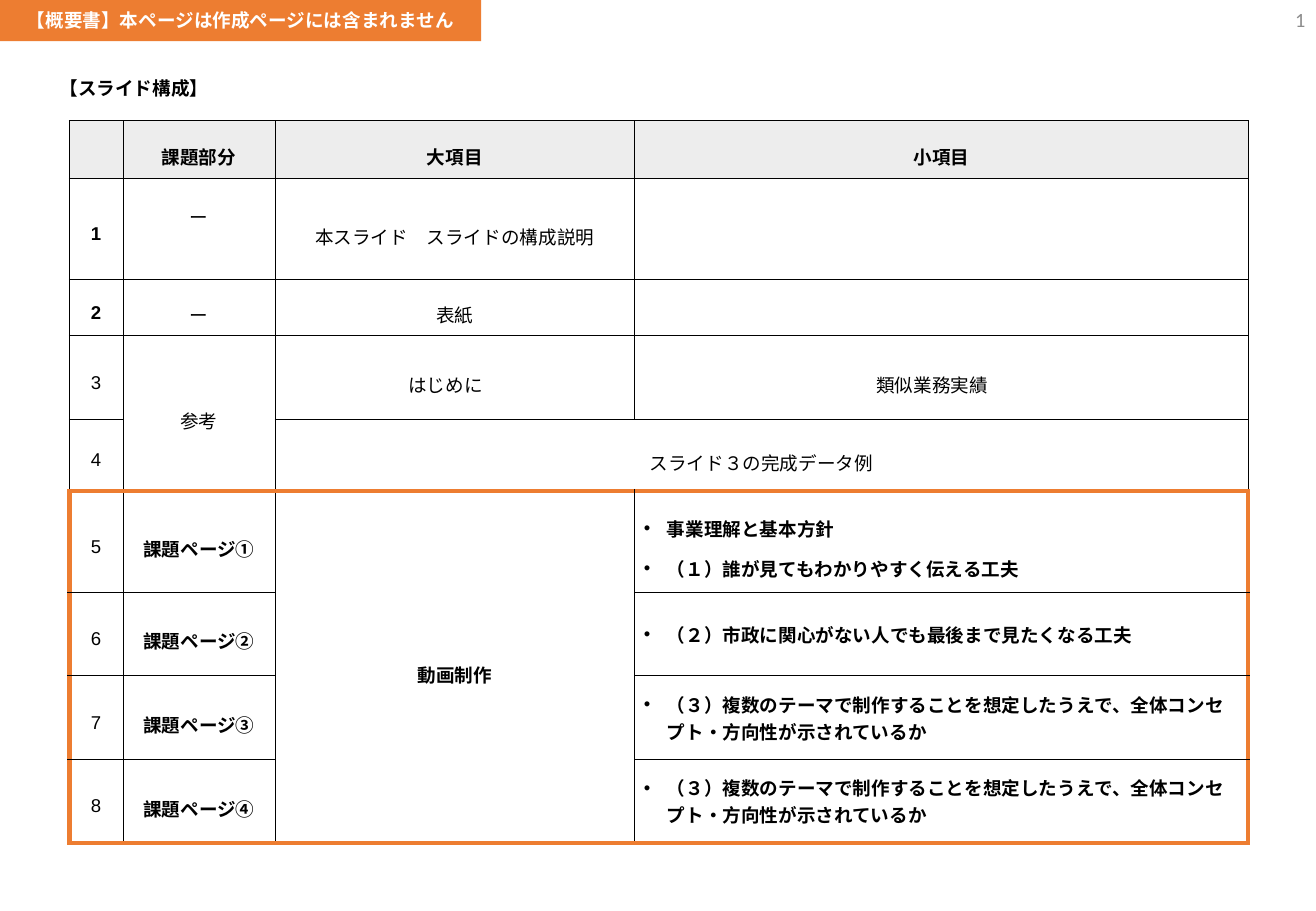
from lxml import etree
from pptx import Presentation
from pptx import util as u
from pptx.dml.color import RGBColor
from pptx.enum import shapes, text
from pptx.oxml import ns

ORANGE, BLACK, GREY, WHITE = "ED7D31", "000000", "EDEDED", "FFFFFF"
FRAME_START = 5
COLUMN_WIDTHS = [1.12, 3.18, 7.52, 12.82]
ROW_HEIGHTS = [1.22, 2.11, 1.17, 1.75, 1.5, 2.11, 1.75, 1.75, 1.75]
CONCEPT = "（３）複数のテーマで制作することを想定したうえで、全体コンセプト・方向性が示されているか"
ROWS = [
    ["", "課題部分", "大項目", "小項目"],
    ["1", "ー", "本スライド　スライドの構成説明", ""],
    ["2", "ー", "表紙", ""],
    ["3", "参考", "はじめに　", "類似業務実績　"],
    ["4", "", "スライド３の完成データ例", ""],
    ["5", "課題ページ①", "動画制作", "事業理解と基本方針\n（１）誰が見てもわかりやすく伝える工夫"],
    ["6", "課題ページ②", "", "（２）市政に関心がない人でも最後まで見たくなる工夫"],
    ["7", "課題ページ③", "", CONCEPT],
    ["8", "課題ページ④", "", CONCEPT],
]
MERGES = [((3, 1), (4, 1)), ((4, 2), (4, 3)), ((5, 2), (8, 2))]


def rgb(code):
    """Return the colour for a hex string."""
    return RGBColor.from_string(code)


def add_bullet(para):
    """Give a paragraph a hanging round bullet."""
    properties = para._p.get_or_add_pPr()
    properties.set("marL", str(u.Cm(0.48)))
    properties.set("indent", str(-u.Cm(0.48)))
    etree.SubElement(properties, ns.qn("a:buFont"), typeface="Arial")
    etree.SubElement(properties, ns.qn("a:buChar"), char="•")


def write(frame, words, size=11, font="Calibri", color=BLACK, bold=False,
          align=text.PP_ALIGN.CENTER, spacing=1.0, bullet=False):
    """Fill a text frame with one formatted paragraph per line."""
    for index, line in enumerate(words.split("\n")):
        para = frame.add_paragraph() if index else frame.paragraphs[0]
        if bullet:
            add_bullet(para)
        para.alignment = align
        para.line_spacing = spacing
        span = para.add_run()
        span.text = line
        span.font.size = u.Pt(size)
        span.font.name = font
        span.font.bold = bold
        span.font.color.rgb = rgb(color)


def place(shape, left, top, width, height):
    """Move and size a shape in centimetres."""
    shape.left, shape.top = u.Cm(left), u.Cm(top)
    shape.width, shape.height = u.Cm(width), u.Cm(height)


def add_heading(page):
    """Write the section heading in the title placeholder."""
    title = page.shapes.title
    place(title, 0.99, 1.24, 5.49, 0.89)
    frame = title.text_frame
    frame.word_wrap = True
    frame.auto_size = text.MSO_AUTO_SIZE.SHAPE_TO_FIT_TEXT
    frame.vertical_anchor = text.MSO_ANCHOR.TOP
    write(frame, "【スライド構成】", bold=True, align=text.PP_ALIGN.LEFT, spacing=1.5)


def add_page_number(page):
    """Add the slide number field at the top right."""
    box = page.shapes.add_textbox(u.Cm(21.34), u.Cm(-0.1), u.Cm(6.2), u.Cm(1.02))
    frame = box.text_frame
    frame.word_wrap = True
    frame.vertical_anchor = text.MSO_ANCHOR.MIDDLE
    write(frame, "1", size=12, color="8C8C8C", align=text.PP_ALIGN.RIGHT)
    field = frame.paragraphs[0].runs[0]._r
    field.tag = ns.qn("a:fld")
    field.set("id", "{B6F15528-21DE-4FAA-801E-634DDDAF4B2B}")
    field.set("type", "slidenum")


def add_banner(page):
    """Add the orange banner in the top left corner."""
    banner = page.shapes.add_shape(shapes.MSO_SHAPE.RECTANGLE, 0, 0, u.Cm(10.06), u.Cm(0.86))
    banner.shadow.inherit = False
    banner.fill.solid()
    banner.fill.fore_color.rgb = rgb(ORANGE)
    banner.line.fill.background()
    banner.text_frame.vertical_anchor = text.MSO_ANCHOR.MIDDLE
    write(banner.text_frame, "【概要書】本ページは作成ページには含まれません", color=WHITE, bold=True)


def set_borders(cell, row, column):
    """Draw thin black borders, thick orange on the task frame."""
    last_row = row + (cell.span_height if cell.is_merge_origin else 1) - 1
    framed = row >= FRAME_START
    on_frame = {
        "a:lnL": framed and column == 0,
        "a:lnR": framed and column == len(COLUMN_WIDTHS) - 1,
        "a:lnT": row == FRAME_START,
        "a:lnB": last_row in (FRAME_START - 1, len(ROWS) - 1),
    }
    properties = cell._tc.get_or_add_tcPr()
    for tag, thick in on_frame.items():
        line = etree.SubElement(properties, ns.qn(tag), w=str(u.Pt(3 if thick else 0.5)))
        fill = etree.SubElement(line, ns.qn("a:solidFill"))
        etree.SubElement(fill, ns.qn("a:srgbClr"), val=ORANGE if thick else BLACK)


def format_cell(cell, row, column):
    """Write and style one table cell."""
    cell.vertical_anchor = text.MSO_ANCHOR.MIDDLE
    cell.margin_left = cell.margin_right = u.Cm(0.19)
    set_borders(cell, row, column)
    if row == 0:
        cell.fill.solid()
        cell.fill.fore_color.rgb = rgb(GREY)
    else:
        cell.fill.background()
    words = ROWS[row][column]
    if not words:
        return
    framed = row >= FRAME_START
    bullet = framed and column == 3
    write(cell.text_frame, words,
          font="Calibri" if words == CONCEPT else "Arial",
          bold=row == 0 or (row < 3 and column == 0) or (framed and column > 0),
          align=text.PP_ALIGN.LEFT if bullet else text.PP_ALIGN.CENTER,
          spacing=1.0 if bullet and row > FRAME_START else 1.5,
          bullet=bullet)


def add_outline_table(page):
    """Add the table that lists the slides."""
    table = page.shapes.add_table(
        len(ROWS), len(COLUMN_WIDTHS), u.Cm(1.45), u.Cm(2.52),
        u.Cm(sum(COLUMN_WIDTHS)), u.Cm(sum(ROW_HEIGHTS))).table
    table.first_row = table.horz_banding = False
    for column, width in zip(table.columns, COLUMN_WIDTHS):
        column.width = u.Cm(width)
    for row, height in zip(table.rows, ROW_HEIGHTS):
        row.height = u.Cm(height)
    for start, end in MERGES:
        table.cell(*start).merge(table.cell(*end))
    for row in range(len(ROWS)):
        for column in range(len(COLUMN_WIDTHS)):
            format_cell(table.cell(row, column), row, column)
    table.cell(1, 1).margin_bottom = u.Cm(0.95)


def main():
    """Build the slide and save it."""
    deck = Presentation()
    deck.slide_width, deck.slide_height = u.Cm(27.51), u.Cm(19.05)
    page = deck.slides.add_slide(deck.slide_layouts[5])
    add_page_number(page)
    add_outline_table(page)
    add_heading(page)
    add_banner(page)
    deck.save("out.pptx")


if __name__ == "__main__":
    main()
